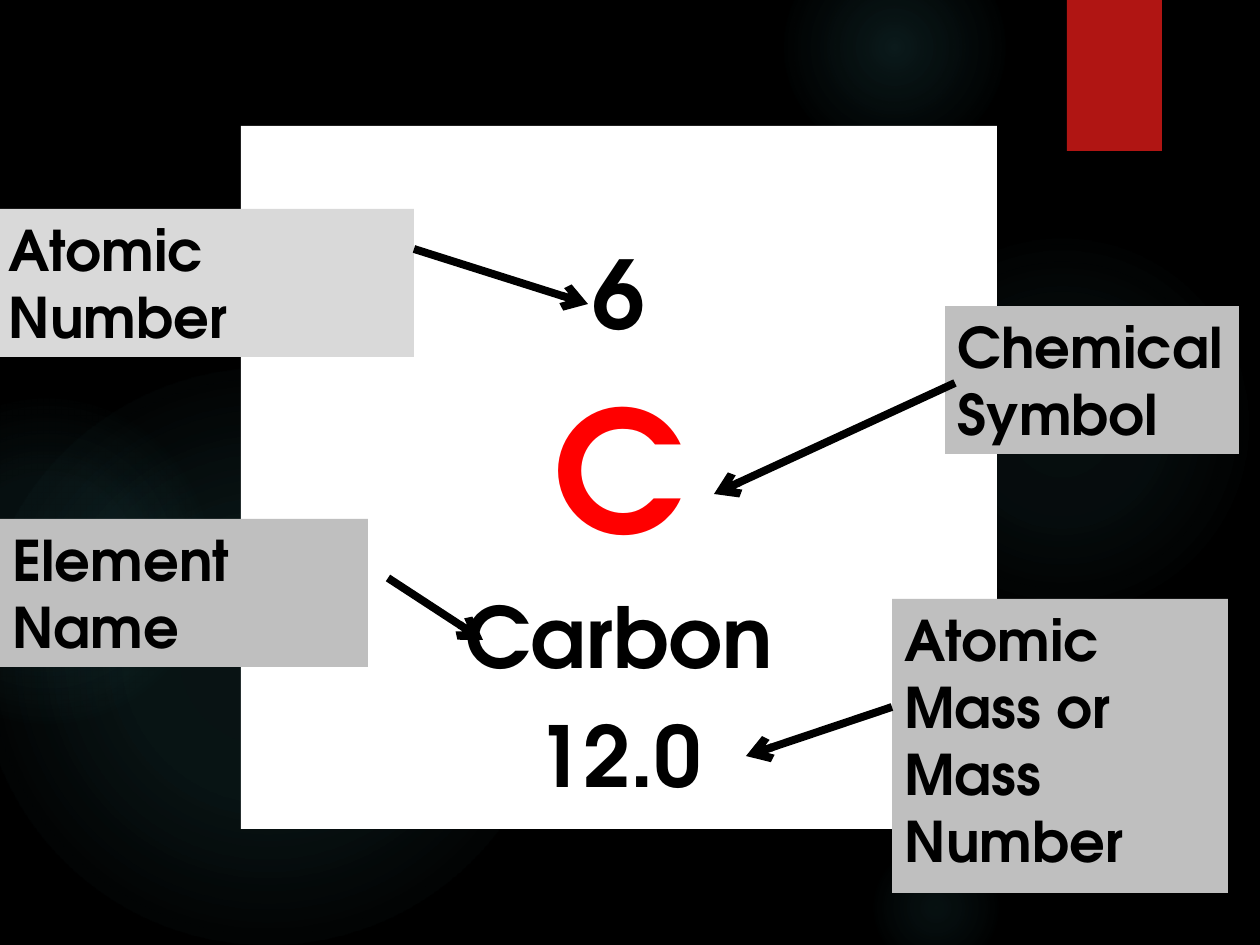
"""Build a slide that explains the parts of a periodic table entry."""
from lxml.etree import SubElement
from pptx import Presentation
from pptx.dml.color import RGBColor
from pptx.enum.shapes import MSO_CONNECTOR, MSO_SHAPE
from pptx.enum.text import MSO_ANCHOR, MSO_AUTO_SIZE, PP_ALIGN
from pptx.oxml import parse_xml
from pptx.oxml.ns import nsdecls, qn
from pptx.util import Pt

PX = 914400 / 126
FONT = "TeX Gyre Adventor"
HUES = {"black": "000000", "white": "FFFFFF", "red": "FF0000", "tab": "B01513",
        "light": "D9D9D9", "grey": "BFBFBF", "glow": "50B9C1"}


def emu(*nums):
    return [round(n * PX) for n in nums]


def rgb(name):
    return RGBColor.from_string(HUES[name])


deck = Presentation()
deck.slide_width, deck.slide_height = emu(1260, 945)
slide = deck.slides.add_slide(deck.slide_layouts[6])
slide.background.fill.solid()
slide.background.fill.fore_color.rgb = rgb("black")
shapes = slide.shapes

glows = [
    (868, 231, 388, [(0, 7), (36, 6), (69, 0)]),
    (784, -63, 221, [(0, 14), (36, 7), (73, 0)]),
    (868, 840, 136, [(0, 9), (36, 5), (66, 0)]),
    (-21, 368, 577, [(0, 11), (36, 10), (75, 0)]),
    (-116, 399, 325, [(0, 8), (36, 8), (72, 0)]),
]
for left, top, size, stops in glows:
    glow = shapes.add_shape(MSO_SHAPE.OVAL, *emu(left, top, size, size))
    glow.shadow.inherit = False
    glow.line.fill.background()
    glow.fill.background()
    marks = "".join(
        f'<a:gs pos="{pos * 1000}"><a:srgbClr val="{HUES["glow"]}">'
        f'<a:alpha val="{alpha * 1000}"/></a:srgbClr></a:gs>'
        for pos, alpha in stops)
    grad = parse_xml(
        f'<a:gradFill {nsdecls("a")}><a:gsLst>{marks}</a:gsLst><a:path path="circle">'
        '<a:fillToRect l="50000" t="50000" r="50000" b="50000"/></a:path></a:gradFill>')
    props = glow._element.spPr
    props.replace(props.find(qn("a:noFill")), grad)

tab = shapes.add_shape(MSO_SHAPE.RECTANGLE, *emu(1067, 0, 95, 151))
tab.shadow.inherit = False
tab.line.fill.background()
tab.fill.solid()
tab.fill.fore_color.rgb = rgb("tab")

card = shapes.add_textbox(*emu(241, 126, 756, 703))
card.fill.solid()
card.fill.fore_color.rgb = rgb("white")
frame = card.text_frame
frame.word_wrap = True
frame.vertical_anchor = MSO_ANCHOR.TOP
frame.margin_top = emu(109)[0]
rows = [("6", 54, "black", 0), ("C", 96, "red", 10),
        ("Carbon", 48, "black", 10), ("12.0", 48, "black", 10)]
frame.text = "\n".join(row[0] for row in rows)
for para, (text, size, hue, gap) in zip(frame.paragraphs, rows):
    para.alignment = PP_ALIGN.CENTER
    para.space_before = Pt(gap)
    para.font.name = FONT
    para.font.size = Pt(size)
    para.font.bold = True
    para.font.color.rgb = rgb(hue)

labels = [
    ("Atomic Number", "light", (-4, 209, 418, 148)),
    ("Element Name", "grey", (0, 519, 368, 148)),
    ("Chemical Symbol", "grey", (945, 306, 294, 148)),
    ("Atomic Mass or Mass Number", "grey", (892, 599, 336, 294)),
]
for text, hue, place in labels:
    label = shapes.add_textbox(*emu(*place))
    label.fill.solid()
    label.fill.fore_color.rgb = rgb(hue)
    frame = label.text_frame
    frame.word_wrap = True
    frame.auto_size = MSO_AUTO_SIZE.SHAPE_TO_FIT_TEXT
    frame.text = text
    font = frame.paragraphs[0].font
    font.name = FONT
    font.size = Pt(32)
    font.bold = True
    font.color.rgb = rgb("black")

arrows = [(414, 249, 588, 304), (388, 578, 483, 640),
          (955, 383, 714, 494), (892, 707, 746, 756)]
for ends in arrows:
    arrow = shapes.add_connector(MSO_CONNECTOR.STRAIGHT, *emu(*ends))
    arrow.line.color.rgb = rgb("black")
    arrow.line.width = Pt(4.5)
    SubElement(arrow.line._get_or_add_ln(), qn("a:tailEnd"), type="arrow")
    SubElement(arrow._element.spPr, qn("a:effectLst"))

deck.save("out.pptx")
